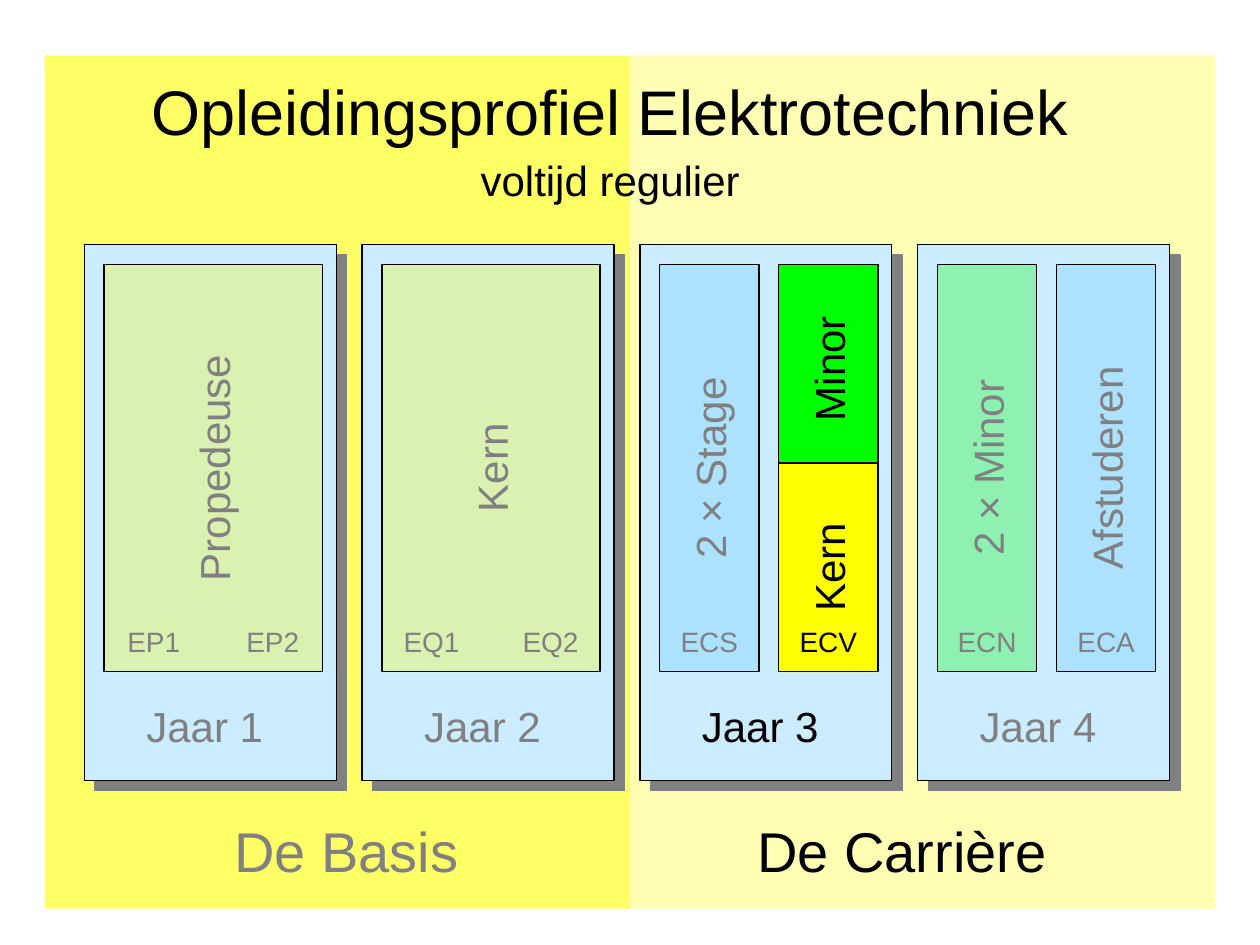
from dataclasses import dataclass

from lxml import etree
from pptx import Presentation
from pptx.dml.color import RGBColor
from pptx.enum.shapes import MSO_SHAPE
from pptx.enum.text import MSO_ANCHOR, MSO_AUTO_SIZE, PP_ALIGN
from pptx.oxml.ns import qn
from pptx.util import Cm, Pt

RECT = MSO_SHAPE.RECTANGLE
TOP, MID = MSO_ANCHOR.TOP, MSO_ANCHOR.MIDDLE
LEFT, CENTER = PP_ALIGN.LEFT, PP_ALIGN.CENTER
FIXED, GROW = MSO_AUTO_SIZE.NONE, MSO_AUTO_SIZE.SHAPE_TO_FIT_TEXT


@dataclass(frozen=True)
class Theme:
    font: str = "Arial"
    ink: str = "000000"
    dim: str = "808080"
    panel: str = "CCECFF"
    base: str = "FFFF66"
    career: str = "FFFFB4"
    core: str = "FFFF00"
    minor: str = "00FF00"
    work: str = "66CCFF"
    title: int = 36
    phase: int = 32
    body: int = 24
    code: int = 16
    line: float = 0.75


T = Theme()
FIXED_MID = {"word_wrap": False, "auto_size": FIXED, "vertical_anchor": MID}
WRAP_MID = {**FIXED_MID, "word_wrap": True}
GROW_TOP = {"word_wrap": False, "auto_size": GROW, "vertical_anchor": TOP}
WRAP_TOP = {**GROW_TOP, "word_wrap": True}

PANEL_X, PANEL_Y, PANEL_W, PANEL_H = 1.7, 4.93, 5.08, 10.8
STEP, PAD = 5.6, 0.4
BLOCK_Y, BLOCK_H, HALF_H = PANEL_Y + PAD, 8.2, 4.2
LOW_Y = BLOCK_Y + BLOCK_H - HALF_H
WIDE, SLIM, SLOT = 4.4, 2, 2.4

YEARS = [("Jaar 1", False), ("Jaar 2", False), ("Jaar 3", True), ("Jaar 4", False)]
BLOCKS = [
    ("Propedeuse", 0, 0, WIDE, BLOCK_Y, BLOCK_H, T.core, False),
    ("Kern", 1, 0, WIDE, BLOCK_Y, BLOCK_H, T.core, False),
    ("2 × Stage", 2, 0, SLIM, BLOCK_Y, BLOCK_H, T.work, False),
    ("Minor", 2, 1, SLIM, BLOCK_Y, HALF_H, T.minor, True),
    ("Kern", 2, 1, SLIM, LOW_Y, HALF_H, T.core, True),
    ("2 × Minor", 3, 0, SLIM, BLOCK_Y, BLOCK_H, T.minor, False),
    ("Afstuderen", 3, 1, SLIM, BLOCK_Y, BLOCK_H, T.work, False),
]
CODES = [("EP1", "EP2"), ("EQ1", "EQ2"), ("ECS", "ECV"), ("ECN", "ECA")]


def tone(live):
    return T.ink if live else T.dim


def slot_x(year, slot):
    return PANEL_X + year * STEP + PAD + slot * SLOT


def write(shape, text, size, color, frame, align=CENTER):
    box = shape.text_frame
    for key, value in frame.items():
        setattr(box, key, value)
    para = box.paragraphs[0]
    para.alignment = align
    run = para.add_run()
    run.text = text
    for key, value in {"name": T.font, "size": Pt(size)}.items():
        setattr(run.font, key, value)
    run.font.color.rgb = RGBColor.from_string(color)


def add_rect(shapes, x, y, w, h, fill, line=True):
    rect = shapes.add_shape(RECT, Cm(x), Cm(y), Cm(w), Cm(h))
    rect.shadow.inherit = False
    rect.fill.solid()
    rect.fill.fore_color.rgb = RGBColor.from_string(fill)
    if line:
        rect.line.color.rgb = RGBColor.from_string(T.ink)
        rect.line.width = Pt(T.line)
    else:
        rect.line.fill.background()
    return rect


def add_label(shapes, x, y, w, h, *style):
    box = shapes.add_textbox(Cm(x), Cm(y), Cm(w), Cm(h))
    write(box, *style)


def add_shade(rect):
    effects = rect.element.spPr.find(qn("a:effectLst"))
    shade = etree.SubElement(effects, qn("a:outerShdw"), dist=str(Pt(8.5)),
                             dir="2700000", algn="ctr", rotWithShape="0")
    etree.SubElement(shade, qn("a:srgbClr"), val=T.dim)


def add_year(slide, index, text, live):
    group = slide.shapes.add_group_shape()
    x = PANEL_X + index * STEP
    add_shade(add_rect(group.shapes, x, PANEL_Y, PANEL_W, PANEL_H, T.panel))
    add_label(group.shapes, x + 1, 14, 2.87, 1.27,
              text, T.body, tone(live), GROW_TOP, LEFT)


def add_block(slide, text, year, slot, w, y, h, fill, live):
    x = slot_x(year, slot) + (w - h) / 2
    block = add_rect(slide.shapes, x, y + (h - w) / 2, h, w, fill)
    block.rotation = 270
    if not live:
        color = block.element.spPr.find(qn("a:solidFill"))[0]
        etree.SubElement(color, qn("a:alpha"), val="30000")
    write(block, text, T.body, tone(live), FIXED_MID)


def add_title(slide, text):
    title = slide.shapes.title
    place = {"left": 1.5, "top": 1.52, "width": 21.6, "height": 1.42}
    for key, value in place.items():
        setattr(title, key, Cm(value))
    write(title, text, T.title, T.ink, WRAP_MID)
    slide.shapes.element.append(title.element)


def main():
    deck = Presentation()
    deck.slide_width, deck.slide_height = Cm(25.4), Cm(19.05)
    slide = deck.slides.add_slide(deck.slide_layouts[5])
    shapes = slide.shapes

    for x, fill in ((12.7, T.career), (0.9, T.base)):
        add_rect(shapes, x, 1.12, 11.8, 17.2, fill, line=False)
    for index, (text, live) in enumerate(YEARS):
        add_year(slide, index, text, live)

    add_title(slide, "Opleidingsprofiel Elektrotechniek")
    add_label(shapes, 1.5, 2.92, 21.6, 1.42,
              "voltijd regulier", T.body, T.ink, WRAP_MID)
    for x, text, live in ((14.3, "De Carrière", True), (3.1, "De Basis", False)):
        add_label(shapes, x, 16.33, 7.77, 1.6,
                  text, T.phase, tone(live), WRAP_TOP)

    for block in BLOCKS:
        add_block(slide, *block)
    for year, pair in enumerate(CODES):
        for slot, text in enumerate(pair):
            add_label(shapes, slot_x(year, slot), 12.32, SLIM, 1.2,
                      text, T.code, tone(text == "ECV"), FIXED_MID)

    deck.save("out.pptx")


if __name__ == "__main__":
    main()
